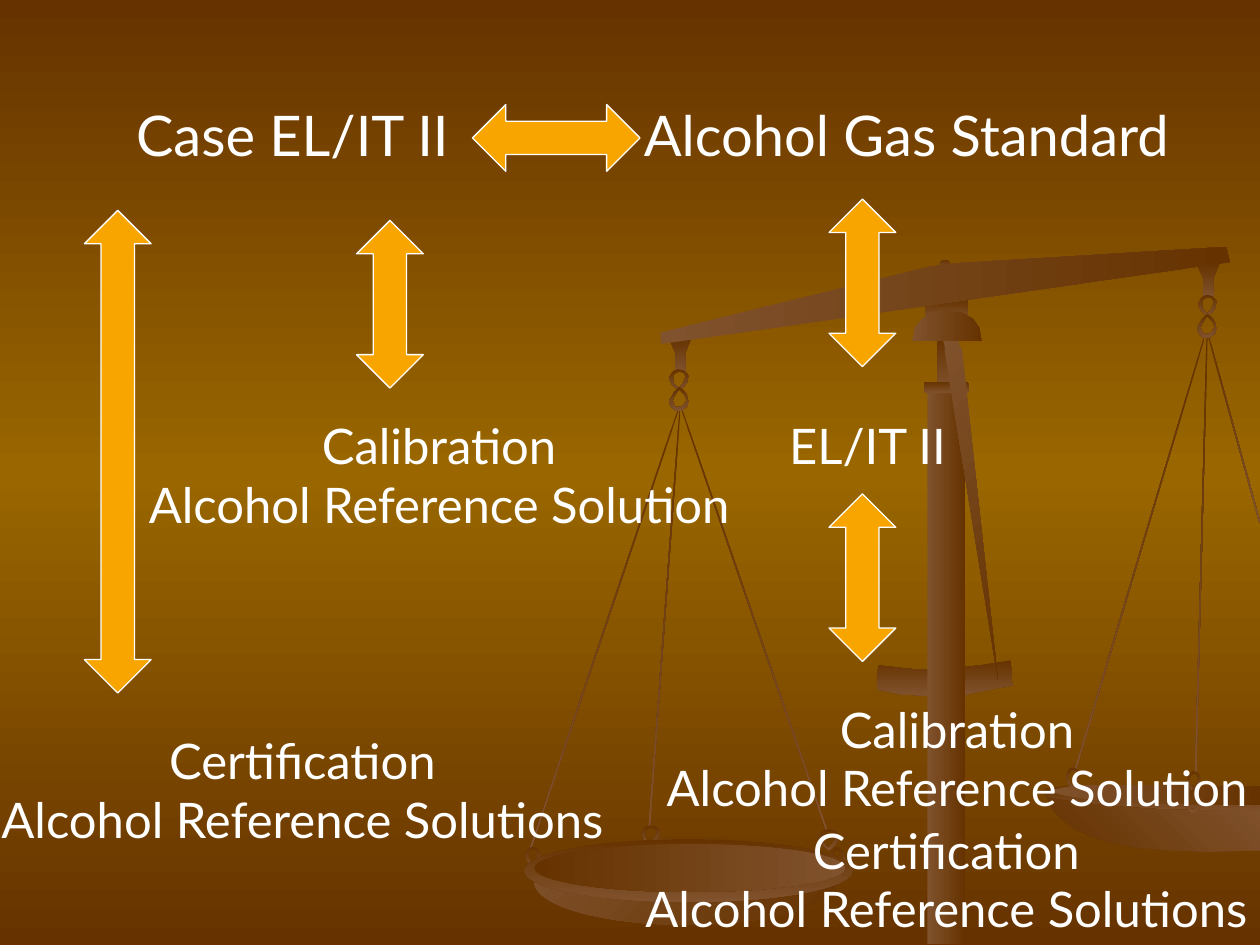
import copy
import pptx
import pptx.util
import pptx.dml.color
import pptx.enum.shapes
import pptx.enum.text
import pptx.oxml

PX = 9144  # one px is a hundredth of an inch
SHAPE = pptx.enum.shapes.MSO_SHAPE
ALIGN = pptx.enum.text.PP_ALIGN
DARK, LIGHT = "663300", "80522D"


def paint(fill, *colors, angle=0):
    """Solid fill for one hex colour, even gradient for several."""
    rgb = [pptx.dml.color.RGBColor.from_string(c) for c in colors]
    if len(rgb) == 1:
        fill.solid()
        fill.fore_color.rgb = rgb[0]
        return
    fill.gradient()
    fill.gradient_angle = (360 - angle) % 360
    stops = fill._fill._gradFill.gsLst
    while len(stops) < len(rgb):
        stops.append(copy.deepcopy(stops[-1]))
    for i, (stop, c) in enumerate(zip(fill.gradient_stops, rgb)):
        stop.color.rgb = c
        stop.position = i / (len(rgb) - 1)


def add_text(s, text, x, y, w, h, size=28, align=ALIGN.CENTER, wrap=False):
    tf = s.shapes.add_textbox(x * PX, y * PX, w * PX, h * PX).text_frame
    tf.word_wrap = wrap
    tf.auto_size = pptx.enum.text.MSO_AUTO_SIZE.SHAPE_TO_FIT_TEXT
    for i, line in enumerate(text.split("\n")):
        p = tf.paragraphs[0] if i == 0 else tf.add_paragraph()
        p.alignment = align
        r = p.add_run()
        r.text = line
        r.font.size = pptx.util.Pt(size)
        r.font.name = "Lato"
        paint(r.font.fill, "FFFFFF")
    return tf


prs = pptx.Presentation()
prs.slide_width, prs.slide_height = 1000 * PX, 750 * PX
s = prs.slides.add_slide(prs.slide_layouts[6])
paint(s.background.fill, DARK, "996600", DARK, angle=90)

# Outlines of the balance scale, each in its own box from 0, 0
LINK = [[(7, 17), (11, 14), (14, 10), (15, 5), (11, 1), (7, 0), (4, 1), (2, 3), (0, 7), (2, 12), (5, 15)],
        [(8, 2), (11, 3), (12, 5), (12, 7), (11, 10), (9, 13), (7, 15), (5, 13), (3, 10), (3, 5), (5, 3)]]
LOOP = [[(1, 15), (3, 17), (5, 19), (10, 19), (14, 16), (16, 12), (14, 6), (12, 3), (9, 0), (8, 0),
         (4, 4), (2, 8), (0, 11)],
        [(3, 11), (4, 8), (6, 5), (8, 2), (13, 7), (14, 11), (11, 15), (9, 16), (5, 16), (4, 14)]]
HANGER = [[(18, 0), (0, 1), (5, 12), (5, 27), (13, 27), (13, 12)]]
BEAM = [[(449, 0), (452, 12), (1, 77), (0, 68), (213, 16), (235, 13)]]
FOOT = [[(1, 4), (28, 7), (43, 7), (61, 6), (82, 4), (106, 0), (108, 20), (86, 24), (72, 27), (55, 28),
         (37, 28), (18, 27), (0, 23)]]
RIM = [[(131, 1), (98, 1), (70, 0), (38, 0), (19, 1), (4, 3), (0, 5), (3, 9), (15, 13), (36, 16),
        (67, 19), (108, 21), (131, 22), (173, 22), (173, 3), (153, 3)]]
BOWL = [[(0, 0), (4, 9), (11, 16), (21, 24), (34, 30), (51, 35), (72, 39), (97, 41), (126, 42), (169, 41),
         (169, 10), (122, 10), (87, 9), (55, 7), (26, 4)]]
DISH = [[(122, 0), (28, 0), (17, 1), (5, 3), (0, 5), (9, 8), (29, 11), (59, 14), (99, 15), (144, 16),
         (166, 16), (166, 1), (134, 1)]]
POINTER = [[(43, 274), (2, 15), (2, 11), (0, 3), (12, 0), (13, 9), (15, 12)]]
CAP = [[(28, 0), (39, 1), (48, 6), (53, 13), (55, 24), (0, 24), (2, 13), (8, 6), (16, 1)]]

RECT, OVAL = SHAPE.RECTANGLE, SHAPE.OVAL
DOWN = (DARK, LIGHT, 90)
ACROSS = (LIGHT, DARK, 0)
SLANT = (LIGHT, DARK, 45)

# Balance scale, back to front: outline, left, top, width, height, gradient, rotation
for outline, x, y, w, h, (c1, c2, angle), turn in [
    (RECT, 734, 237, 34, 18, DOWN, 0),
    (OVAL, 746, 206, 8, 8, DOWN, 0),
    (RECT, 904, 260, 1, 360, DOWN, 16.6),
    (LINK, 846, 609, 11, 17, DOWN, 0),
    (RECT, 953, 266, 1, 347, DOWN, 1.5),
    (RECT, 979, 264, 1, 153, DOWN, 344.6),
    (RECT, 598, 315, 1, 353, DOWN, 341),
    (RECT, 479, 316, 1, 368, DOWN, 18.6),
    (RECT, 527, 325, 1, 331, DOWN, 4.2),
    (FOOT, 696, 524, 108, 28, DOWN, 0),
    (RIM, 827, 623, 173, 22, DOWN, 0),
    (BOWL, 831, 633, 169, 43, (DARK, LIGHT, 315), 0),
    (DISH, 834, 623, 166, 16, ACROSS, 0),
    (HANGER, 531, 268, 18, 27, DOWN, 0),
    (LINK, 531, 293, 16, 17, DOWN, 0),
    (LOOP, 531, 307, 16, 19, DOWN, 0),
    (HANGER, 950, 209, 18, 27, DOWN, 0),
    (LINK, 951, 234, 15, 17, DOWN, 0),
    (LOOP, 950, 249, 16, 19, DOWN, 0),
    (LINK, 942, 612, 11, 17, DOWN, 0),
    (BEAM, 524, 196, 452, 77, ACROSS, 0),
    (LINK, 509, 655, 15, 16, DOWN, 0),
    (LOOP, 656, 672, 16, 19, DOWN, 0),
    (LINK, 417, 672, 12, 16, DOWN, 0),
    (OVAL, 424, 666, 240, 68, SLANT, 0),
    (OVAL, 416, 666, 261, 50, DOWN, 0),
    (OVAL, 424, 670, 247, 38, (DARK, LIGHT, 0), 0),
    (LINK, 650, 658, 16, 17, DOWN, 0),
    (LOOP, 941, 626, 12, 19, DOWN, 0),
    (RECT, 736, 308, 30, 441, ACROSS, 0),
    (RECT, 744, 268, 13, 42, DOWN, 0),
    (SHAPE.ROUNDED_RECTANGLE, 733, 303, 36, 9, DOWN, 0),
    (POINTER, 748, 265, 44, 274, SLANT, 0),
    (CAP, 724, 247, 55, 24, ACROSS, 0),
]:
    if isinstance(outline, list):
        kx = w / max(a for a, b in outline[0])
        ky = h / max(b for a, b in outline[0])
        rings = [[((x + a * kx) * PX, (y + b * ky) * PX) for a, b in ring] for ring in outline]
        fb = s.shapes.build_freeform(*rings[0][0])
        fb.add_line_segments(rings[0][1:])
        for ring in rings[1:]:
            fb.move_to(*ring[0])
            fb.add_line_segments(ring[1:])
        sp = fb.convert_to_shape()
    else:
        sp = s.shapes.add_shape(outline, x * PX, y * PX, w * PX, h * PX)
    sp.rotation = turn
    sp.shadow.inherit = False
    sp.line.fill.background()
    paint(sp.fill, c1, c2, angle=angle)

# Heading: two names set apart by a tab stop
DEVICE = "EL/IT II"
tf = add_text(s, f"Case {DEVICE}\tAlcohol Gas Standard", 0, 75, 1036, 64,
              size=32, align=ALIGN.LEFT, wrap=True)
tf.margin_left = 108 * PX
pPr = tf.paragraphs[0]._p.get_or_add_pPr()
pPr.append(pptx.oxml.parse_xml(
    '<a:tabLst xmlns:a="http://schemas.openxmlformats.org/drawingml/2006/main">'
    f'<a:tab pos="{403 * PX}" algn="l"/></a:tabLst>'))

# Double arrows
UP_DOWN = SHAPE.UP_DOWN_ARROW
for kind, x, y, w, h in [
    (SHAPE.LEFT_RIGHT_ARROW, 375, 83, 133, 53),
    (UP_DOWN, 67, 167, 53, 383),
    (UP_DOWN, 283, 175, 53, 133),
    (UP_DOWN, 658, 158, 53, 133),
    (UP_DOWN, 658, 392, 53, 133),
]:
    sp = s.shapes.add_shape(kind, x * PX, y * PX, w * PX, h * PX)
    sp.shadow.inherit = False
    paint(sp.fill, "F8A500")
    paint(sp.line.fill, "FFFFFF")
    sp.line.width = pptx.util.Pt(0.75)

# Labels
CALIBRATION = "Calibration\nAlcohol Reference Solution"
CERTIFICATION = "Certification\nAlcohol Reference Solutions"
for text, x, y, w, h in [
    (CALIBRATION, 108, 325, 481, 104),
    (CALIBRATION, 519, 550, 481, 104),
    (DEVICE, 608, 325, 161, 57),
    (CERTIFICATION, -9, 575, 498, 104),
    (CERTIFICATION, 502, 646, 498, 104),
]:
    add_text(s, text, x, y, w, h)

prs.save("out.pptx")
